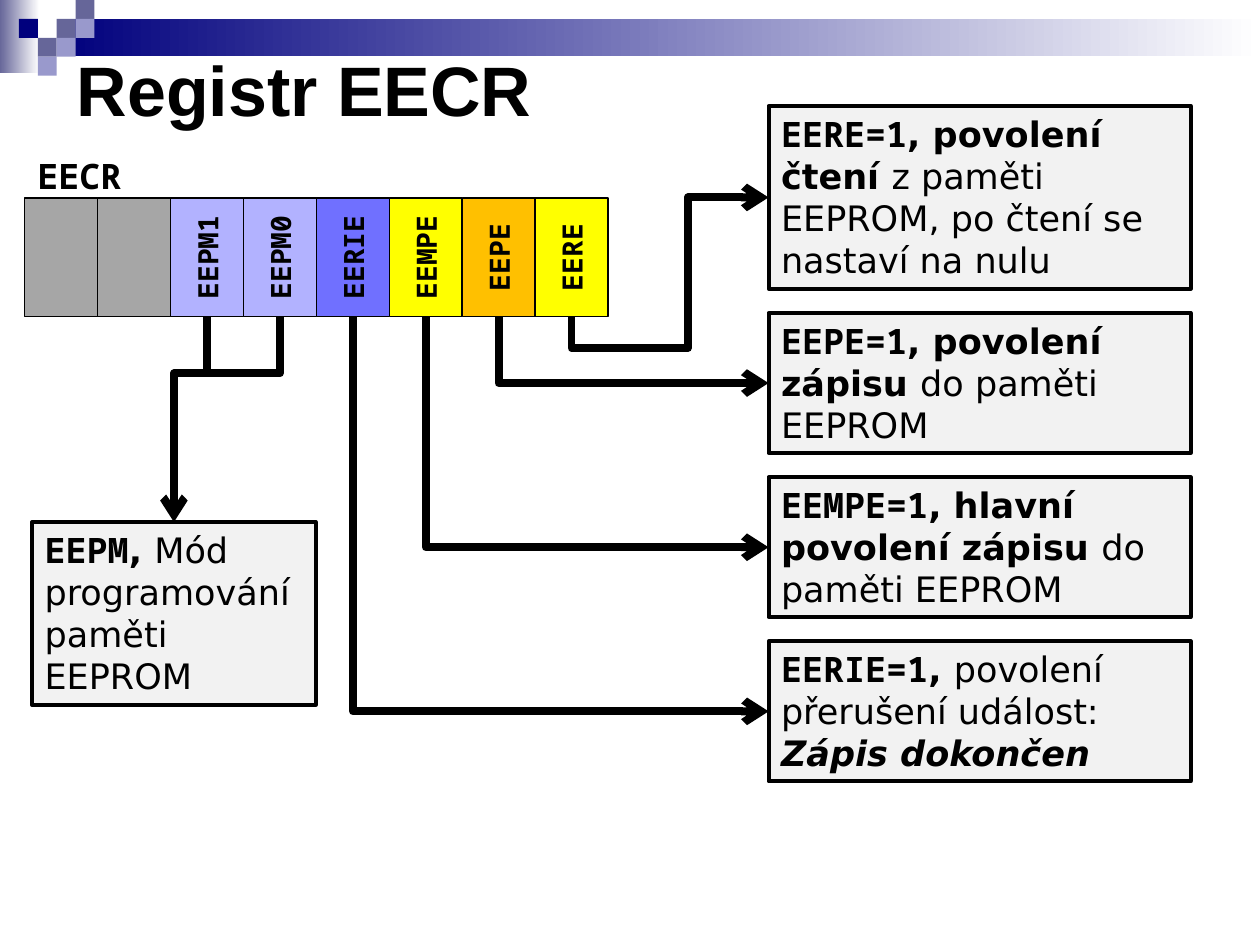
from pptx import Presentation
from pptx.dml.color import RGBColor
from pptx.enum.shapes import MSO_CONNECTOR, MSO_SHAPE
from pptx.enum.text import MSO_ANCHOR, MSO_AUTO_SIZE, PP_ALIGN
from pptx.oxml import parse_xml
from pptx.oxml.ns import nsdecls, qn
from pptx.util import Pt

RECT = MSO_SHAPE.RECTANGLE
ELBOW = MSO_CONNECTOR.ELBOW
MID, TOP = MSO_ANCHOR.MIDDLE, MSO_ANCHOR.TOP
LEFT, CENTER = PP_ALIGN.LEFT, PP_ALIGN.CENTER
GROW = MSO_AUTO_SIZE.SHAPE_TO_FIT_TEXT
MONO, SANS = "Noto Sans Mono", "DejaVu Sans"
BLACK, PALE = "000000", "F2F2F2"

# Content
TITLE = "Registr EECR"
NAME = "EECR"
BITS = [("", "A6A6A6"), ("", "A6A6A6"), ("EEPM1", "B2B2FF"),
        ("EEPM0", "B2B2FF"), ("EERIE", "7070FF"), ("EEMPE", "FFFF00"),
        ("EEPE", "FFC000"), ("EERE", "FFFF00")]
# Notes: bit, height, runs of (text, font, bold, italic)
NOTES = [
    ("EERE", 104.6, [("EERE=1", MONO, True, False),
                     (", povolení čtení ", SANS, True, False),
                     ("z paměti EEPROM, po čtení se nastaví na nulu",
                      SANS, False, False)]),
    ("EEPE", 80, [("EEPE=1", MONO, True, False),
                  (", povolení zápisu ", SANS, True, False),
                  ("do paměti EEPROM", SANS, False, False)]),
    ("EEMPE", 80, [("EEMPE=1", MONO, True, False),
                   (", hlavní povolení zápisu ", SANS, True, False),
                   ("do paměti EEPROM", SANS, False, False)]),
    ("EERIE", 80, [("EERIE=1", MONO, True, False),
                   (", ", SANS, True, False),
                   ("povolení přerušení událost: ", SANS, False, False),
                   ("Zápis dokončen", SANS, True, True)]),
]
MODE = [("EEPM", MONO, True, False), (", ", SANS, True, False),
        ("Mód programování paměti EEPROM", SANS, False, False)]
# Decoration: gradient bars, then squares by column, row
BARS = [(0, 0, 22.4, 41.8, "666699"), (32.4, 10.8, 687.6, 21.4, "00007D")]
SQUARES = [(3, 1, "666699"), (4, 0, "666699"), (4, 1, "9999CC"),
           (2, 2, "666699"), (1, 1, "00007D"), (3, 2, "9999CC"),
           (2, 3, "9999CC")]

# Layout
STEP = 10.8
CELL_X, CELL_Y, CELL_W, CELL_H = 14.2, 113.2, 41.65, 67.9
NOTE_X, NOTE_Y, NOTE_W, GAP = 439.2, 60.5, 241.2, 13.8
JOIN = 32.2


def color(code):
    return RGBColor.from_string(code)


def add_rect(x, y, w, h, fill, line=0):
    box = slide.shapes.add_shape(RECT, Pt(x), Pt(y), Pt(w), Pt(h))
    box.shadow.inherit = False
    box.fill.solid()
    box.fill.fore_color.rgb = color(fill)
    if line:
        box.line.color.rgb = color(BLACK)
        box.line.width = Pt(line)
    else:
        box.line.fill.background()
    return box


def set_font(font, name, size, bold=True, italic=False):
    font.name, font.size = name, Pt(size)
    font.bold, font.italic = bold, italic
    font.color.rgb = color(BLACK)


def add_note(x, y, w, h, runs):
    box = add_rect(x, y, w, h, PALE, 2.25)
    frame = box.text_frame
    frame.word_wrap, frame.auto_size = True, GROW
    frame.vertical_anchor = TOP
    para = frame.paragraphs[0]
    para.alignment, para.space_after = LEFT, Pt(18)
    for text, name, bold, italic in runs:
        run = para.add_run()
        run.text = text
        set_font(run.font, name, 20, bold, italic)
    return box


def add_bend(cell, end, box=None, side=0, kind=2, adjust=()):
    """Elbow line that leaves the bottom of a cell vertically."""
    x1, y1 = cell.left + cell.width // 2, cell.top + cell.height
    x2, y2 = Pt(end[0]), Pt(end[1])
    link = slide.shapes.add_connector(ELBOW, x1, y1, x2, y2)
    link.begin_connect(cell, 2)
    if box is not None:
        link.end_connect(box, side)
    link.line.color.rgb = color(BLACK)
    link.line.width = Pt(4.5)
    props = link._element.spPr
    # A quarter turn swaps the width and height about the centre
    wide, high = abs(x2 - x1), abs(y2 - y1)
    link.left, link.top = (x1 + x2 - high) // 2, (y1 + y2 - wide) // 2
    link.width, link.height = high, wide
    frame = props.find(qn("a:xfrm"))
    for flip in ("flipH", "flipV"):
        frame.attrib.pop(flip, None)
    right = x2 > x1
    frame.set("rot", str((270 if right else 90) * 60000))
    if right and y2 > y1:
        frame.set("flipH", "1")
    # Preset with its bend points
    shape = props.find(qn("a:prstGeom"))
    shape.set("prst", f"bentConnector{kind}")
    guides = "".join(f'<a:gd name="adj{i}" fmla="val {round(v * 100000)}"/>'
                     for i, v in enumerate(adjust, 1))
    for old in list(shape):
        shape.remove(old)
    shape.append(parse_xml(f'<a:avLst {nsdecls("a")}>{guides}</a:avLst>'))
    if box is not None:
        props.find(qn("a:ln")).append(
            parse_xml(f'<a:tailEnd {nsdecls("a")} type="arrow"/>'))
    props.append(parse_xml(f'<a:effectLst {nsdecls("a")}/>'))


deck = Presentation()
deck.slide_width, deck.slide_height = Pt(720), Pt(540)
slide = deck.slides.add_slide(deck.slide_layouts[5])

# Decoration
for x, y, w, h, tone in BARS:
    fill = add_rect(x, y, w, h, tone).fill
    fill.gradient()
    fill.gradient_angle = 0
    for stop, code, spot in zip(fill.gradient_stops, (tone, "FFFFFF"), (0, 1)):
        stop.color.rgb, stop.position = color(code), spot
for col, row, tone in SQUARES:
    add_rect(col * STEP, row * STEP, STEP, STEP, tone)

# Title
title = slide.shapes.title
title.left, title.top = Pt(36.7), Pt(22.3)
title.width, title.height = Pt(638), Pt(57)
title.text_frame.text = TITLE
title.text_frame.vertical_anchor = MID
head = title.text_frame.paragraphs[0]
head.alignment = LEFT
set_font(head.font, "Arial", 40)

# Register cells
cells = {}
for i, (bit, tone) in enumerate(BITS):
    cell = add_rect(CELL_X + i * CELL_W, CELL_Y, CELL_W, CELL_H, tone, 0.75)
    if bit:
        cells[bit] = cell
        frame = cell.text_frame
        frame.text, frame.word_wrap = bit, False
        frame.vertical_anchor = MID
        frame._txBody.bodyPr.set("vert", "vert270")
        frame.paragraphs[0].alignment = CENTER
        set_font(frame.paragraphs[0].font, MONO, 16)

label = slide.shapes.add_textbox(Pt(14.2), Pt(85), Pt(146), Pt(31.5))
label.text_frame.word_wrap = True
label.text_frame.text = NAME
set_font(label.text_frame.paragraphs[0].font, MONO, 20)

# Notes on the right, each with its arrow
y = NOTE_Y
for bit, h, runs in NOTES:
    note = add_note(NOTE_X, y, NOTE_W, h, runs)
    above = y + h / 2 < CELL_Y + CELL_H
    add_bend(cells[bit], (NOTE_X, y + h / 2), note, 1,
             4 if above else 2, (-0.26, 0.59) if above else ())
    y += h + GAP

# Mode note, where two bits share one arrow
mode = add_note(18.4, 298.3, 162, 104.6, MODE)
base = CELL_Y + CELL_H
add_bend(cells["EEPM1"], (99.4, 298.3), mode, 0, 3, (JOIN / (298.3 - base),))
add_bend(cells["EEPM0"], (CELL_X + 2.5 * CELL_W, base + JOIN))

deck.save("out.pptx")
